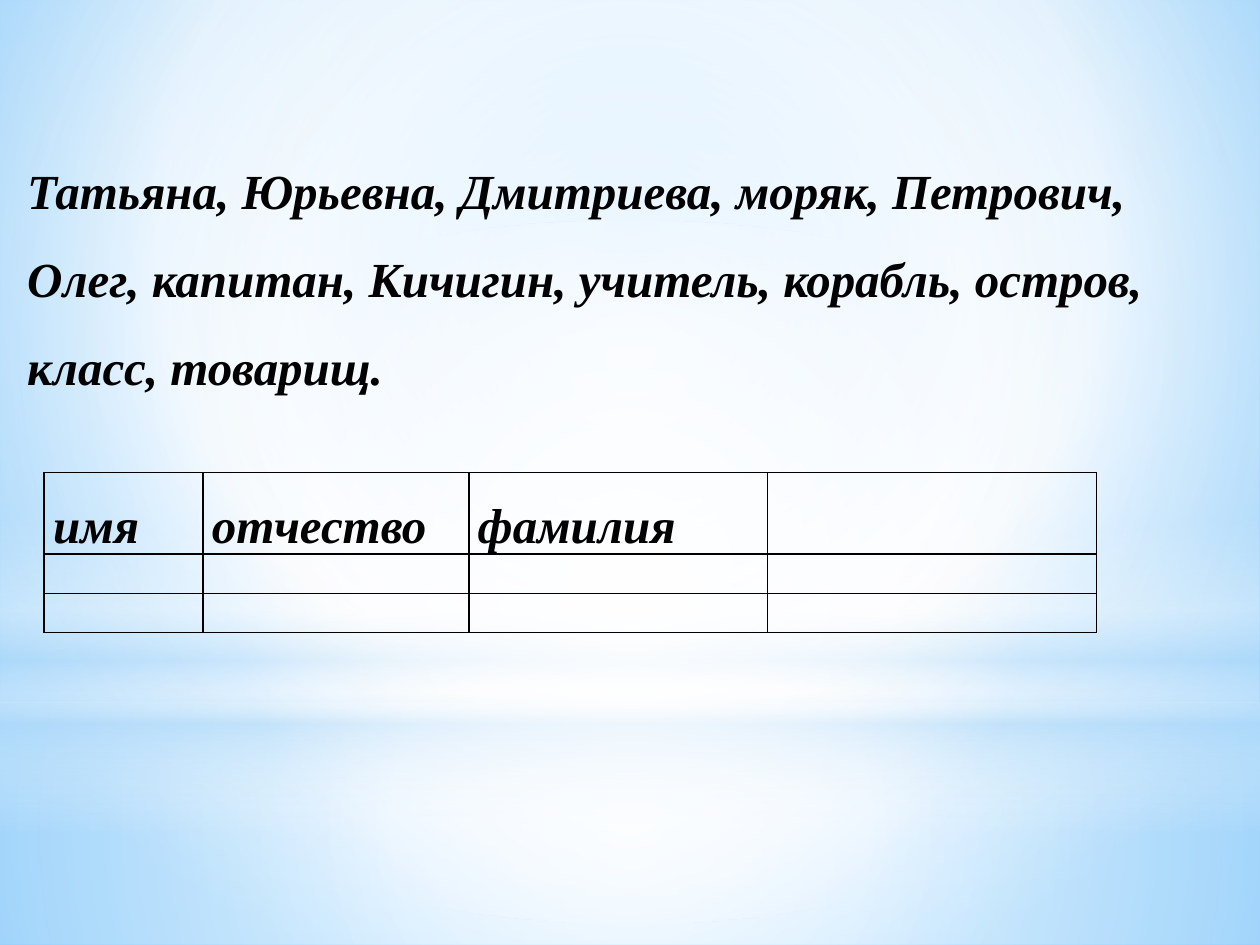
from lxml import etree
from pptx import Presentation, util as u
from pptx.dml.color import RGBColor
from pptx.enum import shapes, text
from pptx.oxml import ns

COLOURS = {"white": "FFFFFF", "sky": "9ED5FF", "blue": "5BB9FF", "pale": "B4DCFA", "ink": "000000"}
FONT = {"name": "Times New Roman", "size": u.Pt(28), "bold": True, "italic": True}


def set_gradient(owner, stops, centre=None):
    """Give owner's gradient stops (position, colour, opacity), round about centre or else downward."""
    gradient = owner.xpath(".//a:gradFill")[0]
    for child in list(gradient):
        gradient.remove(child)
    stop_list = etree.SubElement(gradient, ns.qn("a:gsLst"))
    for position, colour, opacity in stops:
        stop = etree.SubElement(stop_list, ns.qn("a:gs"), pos=str(position * 1000))
        tint = etree.SubElement(stop, ns.qn("a:srgbClr"), val=COLOURS[colour])
        if opacity < 100:
            etree.SubElement(tint, ns.qn("a:alpha"), val=str(opacity * 1000))
    if centre:
        round_path = etree.SubElement(gradient, ns.qn("a:path"), path="circle")
        edges = {side: str(value * 1000) for side, value in zip("ltrb", centre)}
        etree.SubElement(round_path, ns.qn("a:fillToRect"), **edges)
    else:
        etree.SubElement(gradient, ns.qn("a:lin"), ang="5400000", scaled="0")


def write(para, words):
    para.line_spacing = 1.5
    span = para.add_run()
    span.text = words
    for key, value in FONT.items():
        setattr(span.font, key, value)
    span.font.color.rgb = RGBColor.from_string(COLOURS["ink"])


deck = Presentation()
deck.slide_width, deck.slide_height = u.Cm(25.4), u.Cm(19.05)
page = deck.slides.add_slide(deck.slide_layouts[6])

# Background and its soft light
page.background.fill.gradient()
set_gradient(page._element, [(0, "sky", 100), (60, "white", 100), (100, "blue", 100)], (20, 10, 20, 60))

middle = (50, 50, 50, 50)
rectangle, oval = shapes.MSO_SHAPE.RECTANGLE, shapes.MSO_SHAPE.OVAL
lights = [
    (rectangle, 14.17, 4.88, [(0, "white", 91), (37, "white", 76), (100, "pale", 79)], middle),
    (rectangle, 0, 14.17, [(0, "white", 89), (48, "white", 62), (100, "pale", 79)], middle),
    (rectangle, 10.46, 6.35, [(0, "white", 0), (29, "white", 30), (45, "pale", 40),
                              (55, "white", 26), (65, "pale", 60), (100, "white", 0)], None),
    (oval, 4.45, 14.17, [(0, "white", 100), (56, "white", 0)], middle),
]
for kind, top, height, stops, centre in lights:
    light = page.shapes.add_shape(kind, 0, u.Cm(top), deck.slide_width, u.Cm(height))
    light.shadow.inherit = False
    light.line.fill.background()
    light.fill.gradient()
    set_gradient(light._element, stops, centre)

# Table to fill in
headings = ["имя", "отчество", "фамилия", ""]
widths = [3.2, 5.36, 6.02, 6.63]
heights = [1.64, 0.79, 0.79]
table = page.shapes.add_table(len(heights), len(widths), u.Cm(0.89), u.Cm(9.53),
                              u.Cm(sum(widths)), u.Cm(sum(heights))).table
table.first_row = table.horz_banding = False
for column, width in zip(table.columns, widths):
    column.width = u.Cm(width)
for row, height in zip(table.rows, heights):
    row.height = u.Cm(height)
for cell in table.iter_cells():
    cell.margin_left = cell.margin_right = u.Cm(0.18)
    cell.margin_top = cell.margin_bottom = 0
    properties = cell._tc.get_or_add_tcPr()
    for side in ("lnL", "lnR", "lnT", "lnB"):
        border = etree.SubElement(properties, ns.qn(f"a:{side}"), w=str(u.Pt(1)))
        solid = etree.SubElement(border, ns.qn("a:solidFill"))
        etree.SubElement(solid, ns.qn("a:srgbClr"), val=COLOURS["ink"])
    cell.fill.background()
for column, heading in enumerate(headings):
    if heading:
        write(table.cell(0, column).text_frame.paragraphs[0], heading)

# Words to sort
box = page.shapes.add_textbox(u.Cm(0.3), u.Cm(2.51), u.Cm(24.21), u.Cm(5.46))
frame = box.text_frame
frame.word_wrap = True
frame.auto_size = text.MSO_AUTO_SIZE.SHAPE_TO_FIT_TEXT
para = frame.paragraphs[0]
para.space_after = u.Pt(10)
write(para, "Татьяна, Юрьевна, Дмитриева, моряк, Петрович, Олег, капитан, Кичигин, "
            "учитель, корабль, остров, класс, товарищ.")

deck.save("out.pptx")
